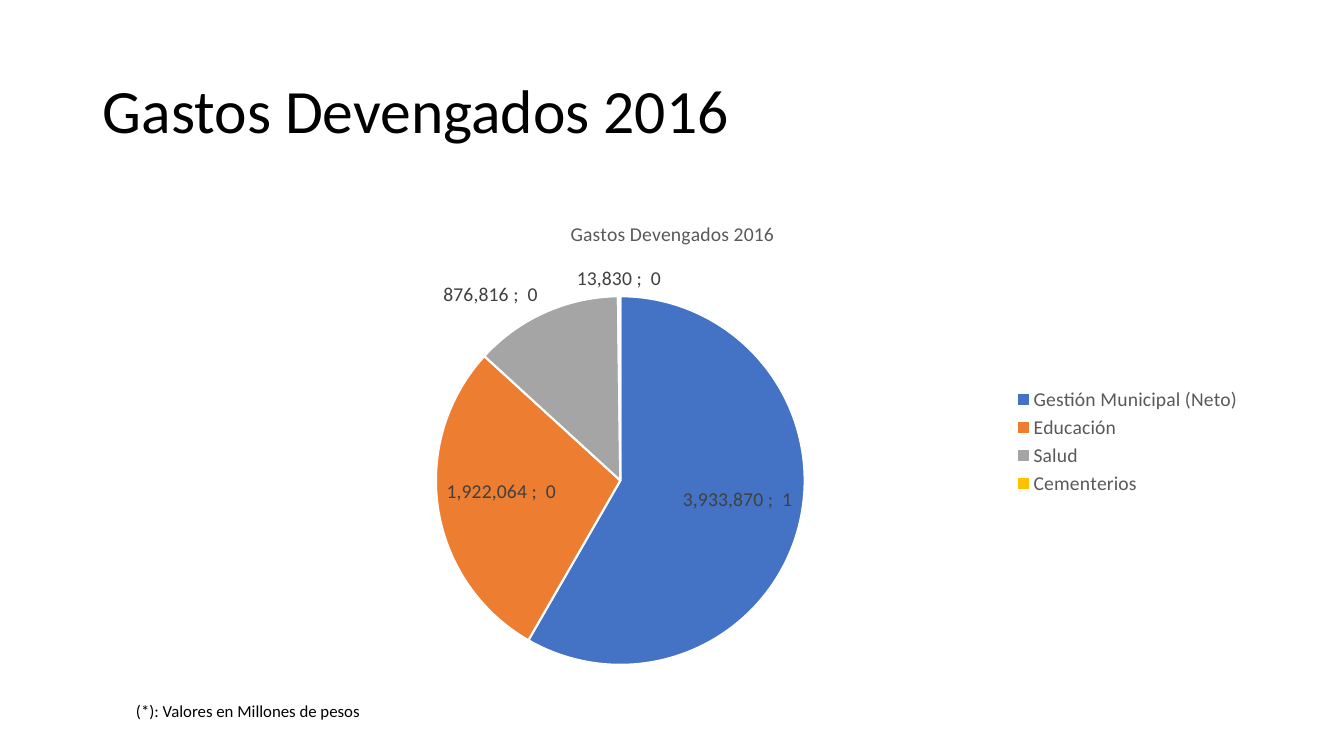
import pptx
import pptx.chart.data
import pptx.dml.color
import pptx.enum.chart
import pptx.enum.text
import pptx.oxml
import pptx.oxml.ns
import pptx.util

Inches = pptx.util.Inches
RGBColor = pptx.dml.color.RGBColor

BLACK = RGBColor(0x00, 0x00, 0x00)
WHITE = RGBColor(0xFF, 0xFF, 0xFF)
GRAY = RGBColor(0x59, 0x59, 0x59)
DARK_GRAY = RGBColor(0x40, 0x40, 0x40)
BLUE = RGBColor(0x44, 0x72, 0xC4)
ORANGE = RGBColor(0xED, 0x7D, 0x31)
SILVER = RGBColor(0xA5, 0xA5, 0xA5)
GOLD = RGBColor(0xFF, 0xC0, 0x00)

TITLE = "Gastos Devengados 2016"
EXPENSES = [
    ("Gestión Municipal (Neto)", 3933870, BLUE),
    ("Educación", 1922064, ORANGE),
    ("Salud", 876816, SILVER),
    ("Cementerios", 13830, GOLD),
]
NUMBER_FORMAT = '_(* #,##0_);_(* \\(#,##0\\);_(* "-"_);_(@_)'


class SlideBuilder:
    """Holds the style and the current slide."""

    font_name = "Calibri"

    def __init__(self, page):
        self.page = page

    def style(self, font, size, color):
        font.name = self.font_name
        font.size = pptx.util.Pt(size)
        font.bold = False
        font.color.rgb = color

    def title(self, text, left, top, width, height):
        box = self.page.shapes.title
        box.left, box.top = Inches(left), Inches(top)
        box.width, box.height = Inches(width), Inches(height)
        frame = box.text_frame
        frame.text = text
        frame.vertical_anchor = pptx.enum.text.MSO_ANCHOR.MIDDLE
        para = frame.paragraphs[0]
        para.alignment = pptx.enum.text.PP_ALIGN.LEFT
        para.line_spacing = 0.9
        self.style(para.font, 44, BLACK)

    def note(self, text, left, top, width, height):
        box = self.page.shapes.add_textbox(
            Inches(left), Inches(top), Inches(width), Inches(height))
        frame = box.text_frame
        frame.word_wrap = False
        frame.auto_size = pptx.enum.text.MSO_AUTO_SIZE.SHAPE_TO_FIT_TEXT
        frame.text = text
        self.style(frame.paragraphs[0].font, 12, BLACK)

    def pie(self, name, rows, left, top, width, height):
        data = pptx.chart.data.CategoryChartData(number_format=NUMBER_FORMAT)
        data.categories = [label for label, value, color in rows]
        data.add_series(name, [value for label, value, color in rows])
        chart = self.page.shapes.add_chart(
            pptx.enum.chart.XL_CHART_TYPE.PIE, Inches(left), Inches(top),
            Inches(width), Inches(height), data).chart
        self.style(chart.font, 10, BLACK)

        # Chart title and legend
        chart.has_title = True
        chart.chart_title.include_in_layout = False
        heading = chart.chart_title.text_frame
        heading.text = name
        self.style(heading.paragraphs[0].font, 14, GRAY)
        chart.has_legend = True
        chart.legend.position = pptx.enum.chart.XL_LEGEND_POSITION.RIGHT
        chart.legend.include_in_layout = False
        self.style(chart.legend.font, 14, GRAY)

        # Slices
        plot = chart.plots[0]
        plot.vary_by_categories = True
        series = plot.series[0]
        for index, (label, value, color) in enumerate(rows):
            slice_format = series.points[index].format
            slice_format.fill.solid()
            slice_format.fill.fore_color.rgb = color
            slice_format.line.color.rgb = WHITE
            slice_format.line.width = pptx.util.Pt(1.5)

        # Value and percentage labels
        labels = series.data_labels
        labels.show_value = True
        labels.show_percentage = True
        labels.number_format = NUMBER_FORMAT
        labels.number_format_is_linked = False
        labels.position = pptx.enum.chart.XL_LABEL_POSITION.BEST_FIT
        self.style(labels.font, 14, DARK_GRAY)
        separator = pptx.oxml.parse_xml(
            f'<c:separator {pptx.oxml.ns.nsdecls("c")}>; </c:separator>')
        labels._element.find(
            pptx.oxml.ns.qn("c:showBubbleSize")).addnext(separator)

        self.place_plot(chart, x=0.296, y=0.197, w=0.318, h=0.769)

    def place_plot(self, chart, **fractions):
        """Fix the pie's frame as fractions of the chart's frame."""
        sides = "".join(f'<c:{side} val="{fraction}"/>'
                        for side, fraction in fractions.items())
        layout = pptx.oxml.parse_xml(
            f'<c:layout {pptx.oxml.ns.nsdecls("c")}><c:manualLayout>'
            '<c:layoutTarget val="inner"/><c:xMode val="edge"/>'
            f'<c:yMode val="edge"/>{sides}</c:manualLayout></c:layout>')
        area = chart._chartSpace.chart.plotArea
        for old_layout in area.findall(pptx.oxml.ns.qn("c:layout")):
            area.remove(old_layout)
        area.insert(0, layout)


def main():
    deck = pptx.Presentation()
    deck.slide_width, deck.slide_height = Inches(13.33), Inches(7.5)
    title_only = deck.slide_layouts[5]
    builder = SlideBuilder(deck.slides.add_slide(title_only))

    builder.title(TITLE, 0.92, 0.4, 11.5, 1.45)
    builder.pie(TITLE, EXPENSES, 0.92, 2, 11.5, 4.76)
    builder.note("(*): Valores en Millones de pesos", 1.25, 6.9, 2.45, 0.3)

    deck.save("out.pptx")


if __name__ == "__main__":
    main()
